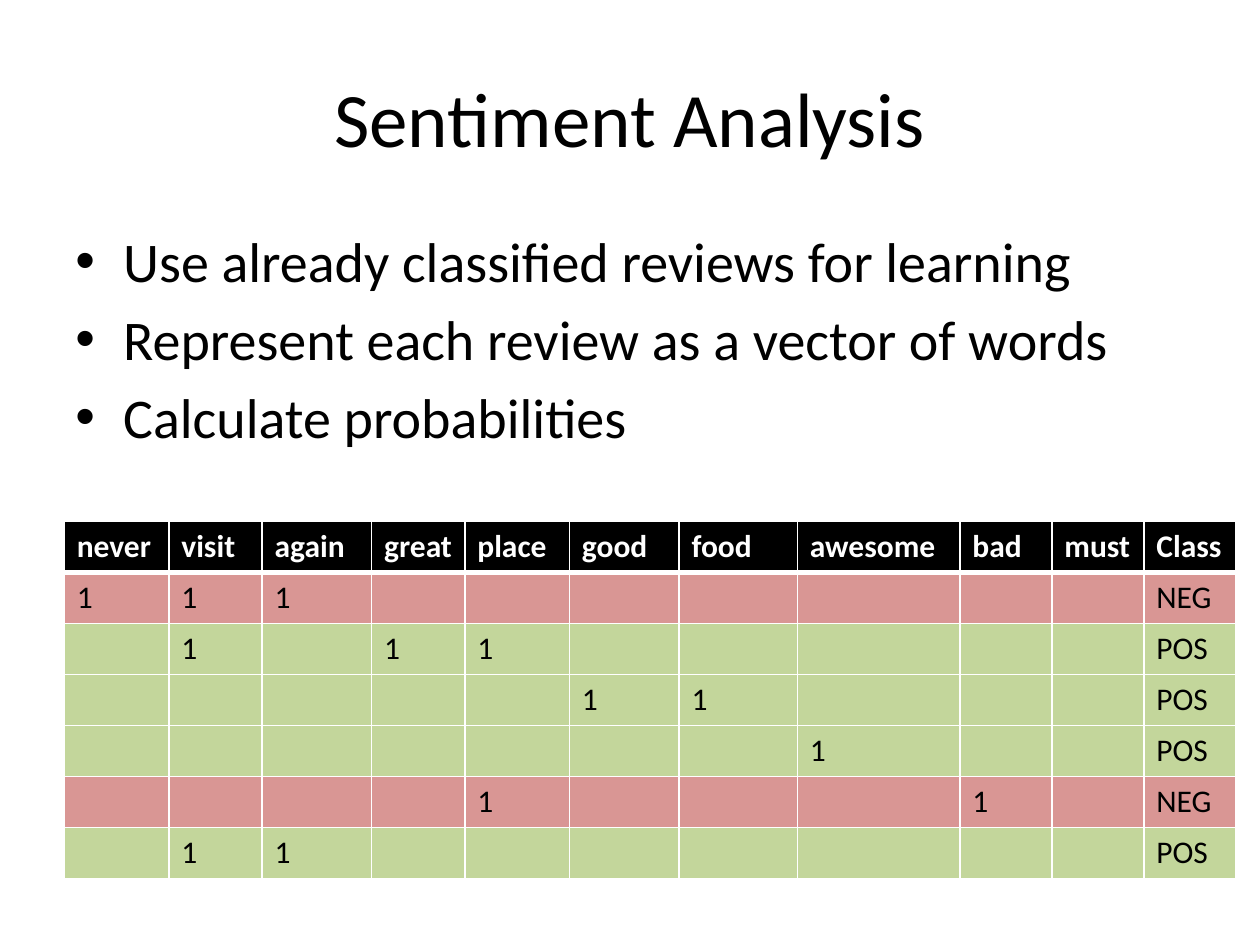
from dataclasses import dataclass

from lxml.etree import SubElement
from pptx import Presentation
from pptx.dml.color import RGBColor
from pptx.enum.text import MSO_ANCHOR, PP_ALIGN
from pptx.oxml.ns import qn
from pptx.util import Inches, Pt


@dataclass(frozen=True)
class Theme:
    font: str = "Calibri"
    ink: str = "000000"
    paper: str = "FFFFFF"
    negative: str = "D99694"
    positive: str = "C3D69B"
    title_size: int = 44
    body_size: int = 32
    table_size: int = 18
    rule: int = 1
    header_rule: int = 3


THEME = Theme()

POINTS = [
    "Use already classified reviews for learning",
    "Represent each review as a vector of words",
    "Calculate probabilities",
]
WORD_WIDTHS = {
    "never": 0.83, "visit": 0.74, "again": 0.87, "great": 0.74, "place": 0.83,
    "good": 0.87, "food": 0.94, "awesome": 1.29, "bad": 0.73, "must": 0.73,
}
CLASS_WIDTH = 0.73
ROW_HEIGHT = 0.405
REVIEWS = [
    ("never visit again", "NEG"),
    ("visit great place", "POS"),
    ("good food", "POS"),
    ("awesome", "POS"),
    ("place bad", "NEG"),
    ("visit again", "POS"),
]


def write(paragraph, text, size, color=THEME.ink, bold=False, align=PP_ALIGN.LEFT):
    paragraph.alignment = align
    paragraph.font.size = Pt(size)
    run = paragraph.add_run()
    run.text = text
    run.font.name = THEME.font
    run.font.size = Pt(size)
    run.font.bold = bold
    run.font.color.rgb = RGBColor.from_string(color)


def add_frame(slide, box, anchor):
    frame = slide.shapes.add_textbox(*map(Inches, box)).text_frame
    frame.word_wrap = True
    frame.vertical_anchor = anchor
    return frame


def add_title(slide, box):
    frame = add_frame(slide, box, MSO_ANCHOR.MIDDLE)
    write(frame.paragraphs[0], "Sentiment Analysis", THEME.title_size,
          align=PP_ALIGN.CENTER)


def add_bullet(paragraph, indent):
    properties = paragraph._p.get_or_add_pPr()
    properties.set("marL", str(indent))
    properties.set("indent", str(-indent))
    SubElement(properties, qn("a:buFont"), typeface="Arial")
    SubElement(properties, qn("a:buChar"), char="•")


def add_points(slide, box):
    frame = add_frame(slide, box, MSO_ANCHOR.TOP)
    for index, point in enumerate(POINTS):
        paragraph = frame.add_paragraph() if index else frame.paragraphs[0]
        paragraph.space_before = Pt(6)
        add_bullet(paragraph, Inches(0.38))
        write(paragraph, point, THEME.body_size)


def set_borders(cell, top, bottom):
    """Draw all four edges; call before filling, as the schema puts lines first."""
    properties = cell._tc.get_or_add_tcPr()
    widths = {"L": THEME.rule, "R": THEME.rule, "T": top, "B": bottom}
    for side, width in widths.items():
        line = SubElement(properties, qn(f"a:ln{side}"), w=str(Pt(width)))
        fill = SubElement(line, qn("a:solidFill"))
        SubElement(fill, qn("a:srgbClr"), val=THEME.paper)


def fill_row(cells, texts, fill, top=THEME.rule, bottom=THEME.rule, **text_format):
    for cell, text in zip(cells, texts):
        set_borders(cell, top, bottom)
        cell.fill.solid()
        cell.fill.fore_color.rgb = RGBColor.from_string(fill)
        if text:
            write(cell.text_frame.paragraphs[0], text, THEME.table_size, **text_format)


def add_review_table(slide, left, top):
    widths = [*WORD_WIDTHS.values(), CLASS_WIDTH]
    row_count = len(REVIEWS) + 1
    table = slide.shapes.add_table(
        row_count, len(widths), Inches(left), Inches(top),
        Inches(sum(widths)), Inches(ROW_HEIGHT * row_count)).table
    table.horz_banding = False
    for column, width in zip(table.columns, widths):
        column.width = Inches(width)

    header, *review_rows = table.rows
    fill_row(header.cells, [*WORD_WIDTHS, "Class"], THEME.ink,
             bottom=THEME.header_rule, color=THEME.paper, bold=True)
    fills = {"NEG": THEME.negative, "POS": THEME.positive}
    for index, (row, (review, label)) in enumerate(zip(review_rows, REVIEWS)):
        present = review.split()
        vector = ["1" if word in present else "" for word in WORD_WIDTHS]
        fill_row(row.cells, [*vector, label], fills[label],
                 top=THEME.rule if index else THEME.header_rule)


def main():
    deck = Presentation()
    deck.slide_width, deck.slide_height = Inches(10), Inches(7.5)
    slide = deck.slides.add_slide(deck.slide_layouts[6])
    add_title(slide, (0.5, 0.3, 9, 1.25))
    add_points(slide, (0.5, 1.75, 9, 4.95))
    add_review_table(slide, 0.51, 4.14)
    deck.save("out.pptx")


if __name__ == "__main__":
    main()
